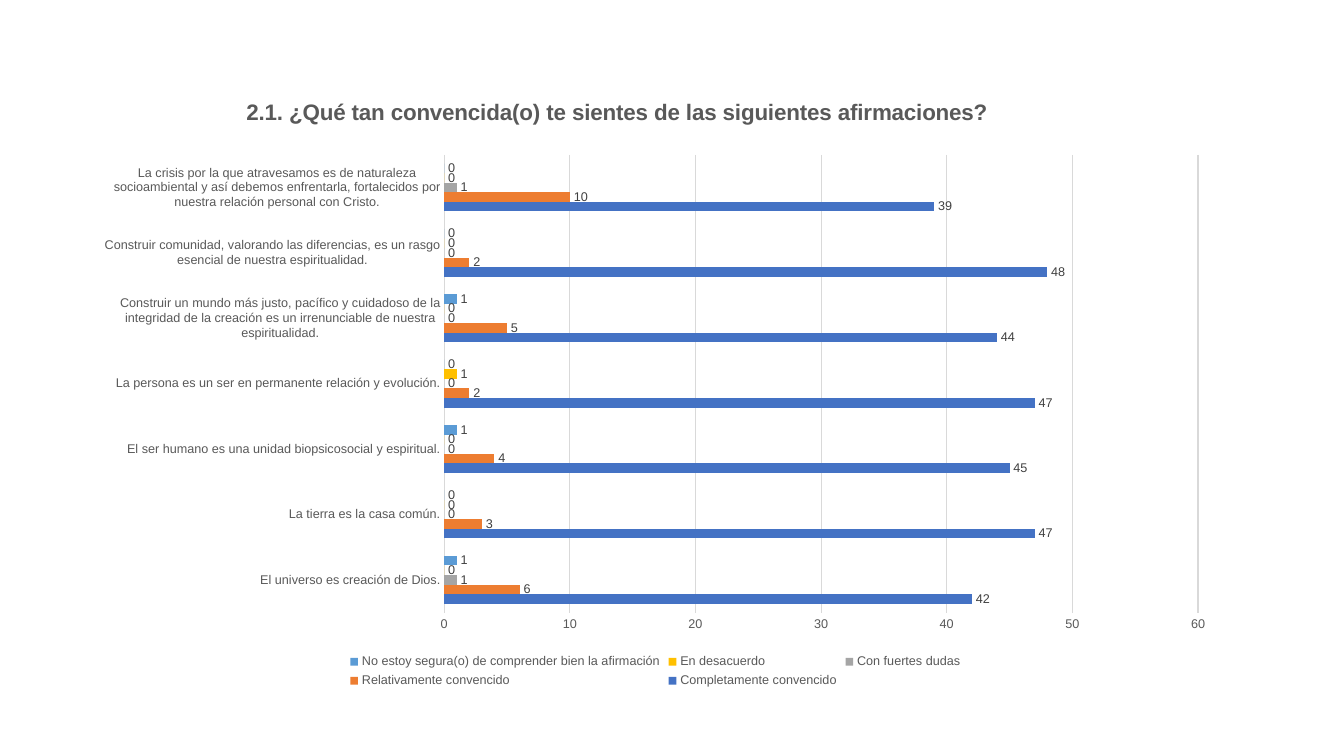
"""Build a slide with a clustered bar chart of how convinced people are of seven statements."""
from lxml import etree
from pptx import Presentation
from pptx import util as u
from pptx.chart.data import CategoryChartData
from pptx.dml.color import RGBColor
from pptx.enum import chart as ch
from pptx.oxml.ns import qn

COLOURS = {
    "text": "595959", "label": "404040", "rule": "D9D9D9",
    "Completamente convencido": "4472C4",
    "Relativamente convencido": "ED7D31",
    "Con fuertes dudas": "A5A5A5",
    "En desacuerdo": "FFC000",
    "No estoy segura(o) de comprender bien la afirmación": "5B9BD5",
}
ANSWERS = {
    "Completamente convencido": (42, 47, 45, 47, 44, 48, 39),
    "Relativamente convencido": (6, 3, 4, 2, 5, 2, 10),
    "Con fuertes dudas": (1, 0, 0, 0, 0, 0, 1),
    "En desacuerdo": (0, 0, 0, 1, 0, 0, 0),
    "No estoy segura(o) de comprender bien la afirmación": (1, 0, 1, 0, 1, 0, 0),
}
STATEMENTS = (
    "El universo es creación de Dios.",
    "La tierra es la casa común.",
    "El ser humano es una unidad biopsicosocial y espiritual.",
    "La persona es un ser en permanente relación y evolución.",
    "Construir un mundo más justo, pacífico y cuidadoso de la integridad de la creación "
    "es un irrenunciable de nuestra espiritualidad.",
    "Construir comunidad, valorando las diferencias, es un rasgo esencial de nuestra espiritualidad.",
    "La crisis por la que atravesamos es de naturaleza socioambiental y así debemos enfrentarla, "
    "fortalecidos por nuestra relación personal con Cristo.",
)


def style_font(font, colour, size=9, bold=False):
    values = {"name": "Arial", "size": u.Pt(size), "bold": bold}
    for name, value in values.items():
        setattr(font, name, value)
    font.color.rgb = RGBColor.from_string(COLOURS[colour])


def place(element, index, settings):
    for old in element.findall(qn("c:layout")):
        element.remove(old)
    layout = etree.Element(qn("c:layout"))
    manual = etree.SubElement(layout, qn("c:manualLayout"))
    for name, value in settings.items():
        etree.SubElement(manual, qn(f"c:{name}")).set("val", str(value))
    element.insert(index, layout)


deck = Presentation()
deck.slide_width, deck.slide_height = u.Inches(13.33), u.Inches(7.5)
page = deck.slides.add_slide(deck.slide_layouts[6])

data = CategoryChartData()
data.categories = STATEMENTS
for answer, counts in ANSWERS.items():
    data.add_series(answer, counts)
frame = page.shapes.add_chart(ch.XL_CHART_TYPE.BAR_CLUSTERED, u.Inches(0.81), u.Inches(0.87),
                              u.Inches(11.38), u.Inches(6), data)
chart = frame.chart
style_font(chart.font, "text", 10)

title = chart.chart_title
title.text_frame.text = "2.1. ¿Qué tan convencida(o) te sientes de las siguientes afirmaciones?"
style_font(title.text_frame.paragraphs[0].runs[0].font, "text", 16, True)
title.include_in_layout = False

plot = chart.plots[0]
plot.gap_width = 182
plot.overlap = 0
plot.vary_by_categories = False
for series in plot.series:
    series.format.fill.solid()
    series.format.fill.fore_color.rgb = RGBColor.from_string(COLOURS[series.name])
    series.invert_if_negative = False
    labels = series.data_labels
    labels.show_value = True
    labels.position = ch.XL_LABEL_POSITION.OUTSIDE_END
    style_font(labels.font, "label")

for axis in (chart.category_axis, chart.value_axis):
    axis.major_tick_mark = axis.minor_tick_mark = ch.XL_TICK_MARK.NONE
    style_font(axis.tick_labels.font, "text")
chart.value_axis.has_major_gridlines = True
for line in (chart.category_axis.format.line, chart.value_axis.major_gridlines.format.line):
    line.width = u.Pt(0.75)
    line.color.rgb = RGBColor.from_string(COLOURS["rule"])
chart.value_axis.format.line.fill.background()
chart.value_axis.minimum_scale = 0
chart.value_axis.maximum_scale = 60
chart.value_axis.major_unit = 10

chart.has_legend = True
chart.legend.position = ch.XL_LEGEND_POSITION.BOTTOM
chart.legend.include_in_layout = False
style_font(chart.legend.font, "text")

edges = {"xMode": "edge", "yMode": "edge"}
place(title._element, 1, {**edges, "x": 0.14, "y": 0.01})
place(chart._chartSpace.chart.plotArea, 0,
      {"layoutTarget": "inner", **edges, "x": 0.316, "y": 0.111, "w": 0.657, "h": 0.757})
place(chart.legend._element, 1, {**edges, "x": 0.23, "y": 0.93, "w": 0.54, "h": 0.07})

deck.save("out.pptx")
